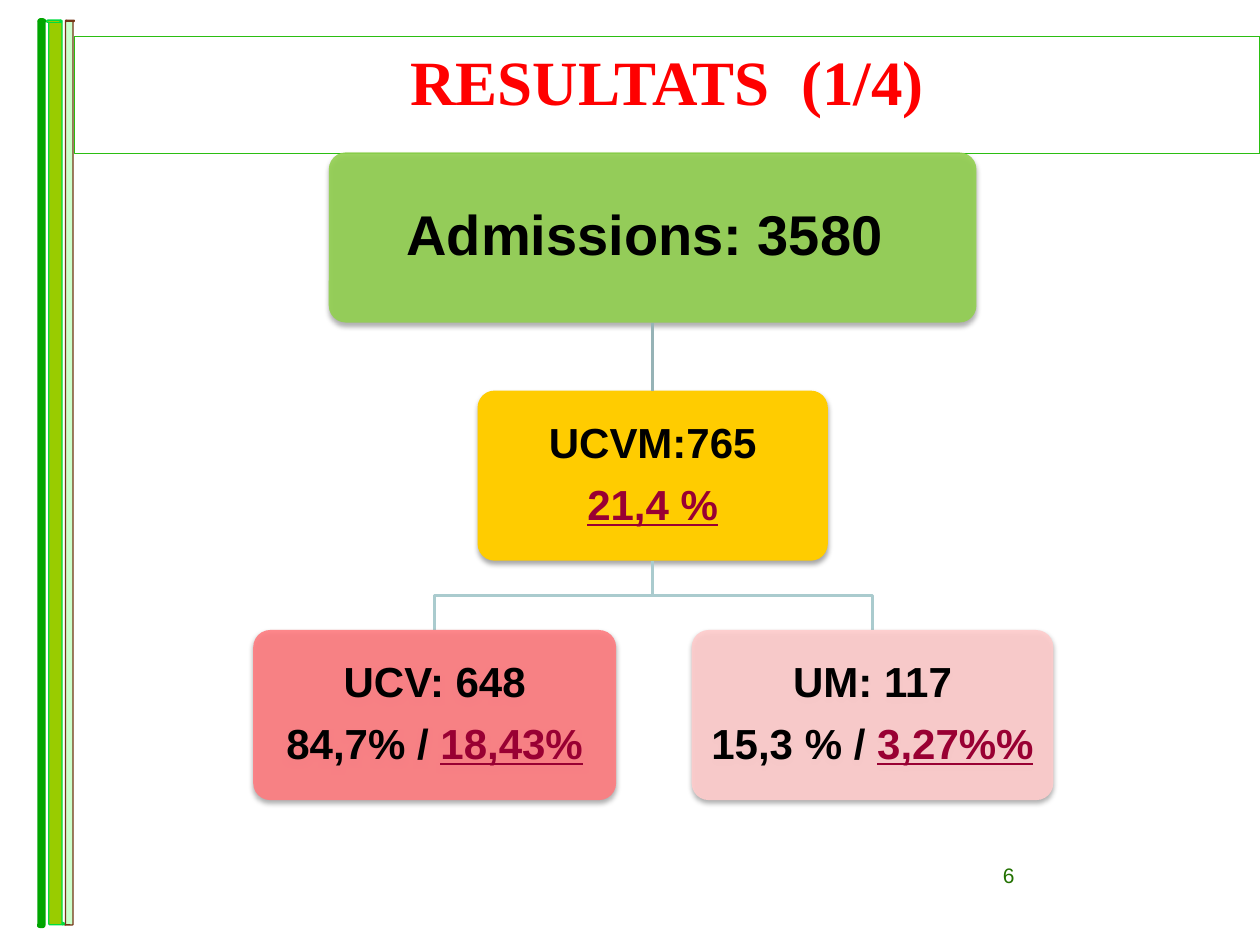
import pptx
import pptx.dml.color
import pptx.enum.dml
import pptx.enum.shapes
import pptx.enum.text
import pptx.oxml
import pptx.oxml.ns
import pptx.util
from dataclasses import dataclass
from typing import Any

Inches = pptx.util.Inches
Pt = pptx.util.Pt
Shape = pptx.enum.shapes.MSO_SHAPE
Anchor = pptx.enum.text.MSO_ANCHOR

HUES = {
    "black": "000000", "wine": "990033", "red": "FF0000", "page": "227100",
    "frame": "2BBE12", "green": "92D050", "gold": "FFCC00", "coral": "FF7C80",
    "pink": "FFCCCC", "stem": "96B3B6", "fork": "AACBCE",
    "mint": "CCFFCC", "brown": "743515", "lime": "99CC00", "neon": "00DD40",
    "brick": "C00000", "leaf": "00A500",
}
NS = 'xmlns:a="http://schemas.openxmlformats.org/drawingml/2006/main"'
HIGH = 1.35


@dataclass
class Band:
    left: float
    top: float
    high: float
    fill: str
    edge: str
    thick: float
    flip: bool


@dataclass
class Node:
    left: float
    top: float
    wide: float
    fill: str
    alpha: int
    size: int
    head: str
    rate: str = ""
    mark: str = ""

    @property
    def mid(self) -> float:
        return self.left + self.wide / 2


def hue(name: str) -> Any:
    return pptx.dml.color.RGBColor.from_string(HUES[name])


def write(para: Any, text: str, *, size: float, color: str = "black",
          font: str = "Arial", bold: bool = True, under: bool = False) -> None:
    run = para.add_run()
    run.text = text
    run.font.size = Pt(size)
    run.font.name = font
    run.font.bold = bold
    run.font.underline = under
    run.font.color.rgb = hue(color)
    para.alignment = pptx.enum.text.PP_ALIGN.CENTER


def stroke(line: Any, color: str, thick: float) -> None:
    line.color.rgb = hue(color)
    line.width = Pt(thick)


def draw_band(slide: Any, band: Band) -> None:
    shape = slide.shapes.add_shape(
        Shape.HORIZONTAL_SCROLL, Inches(band.left), Inches(band.top),
        Inches(7.18), Inches(band.high))
    shape.rotation = 90
    shape.shadow.inherit = False
    shape.fill.solid()
    shape.fill.fore_color.rgb = hue(band.fill)
    stroke(shape.line, band.edge, band.thick)
    if band.flip:
        shape._element.spPr.xfrm.set("flipV", "1")


def draw_title(slide: Any, text: str) -> None:
    box = slide.shapes.add_shape(
        Shape.RECTANGLE, Inches(0.59), Inches(0.29), Inches(9.41), Inches(0.93))
    box.shadow.inherit = False
    box.fill.background()
    stroke(box.line, "frame", 0.75)
    box.text_frame.vertical_anchor = Anchor.TOP
    write(box.text_frame.paragraphs[0], text, size=36, color="red",
          font="Times New Roman")


def draw_page(slide: Any, text: str) -> None:
    box = slide.shapes.add_textbox(
        Inches(7.42), Inches(6.8), Inches(1.17), Inches(0.5))
    box.text_frame.word_wrap = True
    write(box.text_frame.paragraphs[0], text, size=12, color="page", bold=False)


def soften(shape: Any, alpha: int) -> None:
    props = shape._element.spPr
    tint = props.find(".//" + pptx.oxml.ns.qn("a:srgbClr"))
    tint.append(pptx.oxml.parse_xml(f'<a:alpha {NS} val="{alpha * 1000}"/>'))
    shape.shadow.inherit = False
    props.find(pptx.oxml.ns.qn("a:effectLst")).append(pptx.oxml.parse_xml(
        f'<a:outerShdw {NS} blurRad="{Pt(3.1)}" dist="{Pt(1.8)}" dir="5400000" '
        'rotWithShape="0"><a:srgbClr val="000000"><a:alpha val="35000"/>'
        '</a:srgbClr></a:outerShdw>'))


def draw_node(slide: Any, node: Node) -> Any:
    shape = slide.shapes.add_shape(
        Shape.ROUNDED_RECTANGLE, Inches(node.left), Inches(node.top),
        Inches(node.wide), Inches(HIGH))
    shape.adjustments[0] = 0.1
    shape.fill.solid()
    shape.fill.fore_color.rgb = hue(node.fill)
    shape.line.fill.background()
    soften(shape, node.alpha)
    frame = shape.text_frame
    frame.word_wrap = True
    frame.vertical_anchor = Anchor.MIDDLE
    frame.margin_left = frame.margin_right = Inches(0.1)
    write(frame.paragraphs[0], node.head, size=node.size)
    if node.mark:
        para = frame.add_paragraph()
        if node.rate:
            write(para, node.rate, size=node.size)
        write(para, node.mark, size=node.size, color="wine", under=True)
    for para in frame.paragraphs:
        para.line_spacing = 0.9
        para.space_after = Pt(node.size * 0.4)
    return shape


def draw_stem(slide: Any, top: Any, base: Any) -> None:
    stem = slide.shapes.add_connector(
        pptx.enum.shapes.MSO_CONNECTOR.STRAIGHT, 0, 0, 0, 0)
    stem.begin_connect(top, 2)
    stem.end_connect(base, 0)
    stroke(stem.line, "stem", 2)
    stem._element.spPr.append(pptx.oxml.parse_xml(f"<a:effectLst {NS}/>"))


def draw_fork(slide: Any, top: Node, base: Node) -> None:
    start = top.top + HIGH
    bend = (start + base.top) / 2
    pen = slide.shapes.build_freeform(
        Inches(top.mid), Inches(start), scale=1.0)
    pen.add_line_segments(
        [(Inches(x), Inches(y)) for x, y in
         ((top.mid, bend), (base.mid, bend), (base.mid, base.top))], close=False)
    fork = pen.convert_to_shape()
    fork.shadow.inherit = False
    fork.fill.background()
    stroke(fork.line, "fork", 2)


BANDS = [
    Band(-3.04, 3.71, 0.08, "mint", "brown", 0.75, True),
    Band(-3.15, 3.68, 0.14, "lime", "neon", 0.75, False),
    Band(-3.26, 3.74, 0.03, "brick", "leaf", 3, True),
]
ROOT = Node(2.61, 1.21, 5.14, "green", 90, 32, "Admissions: 3580 ")
UNIT = Node(3.79, 3.1, 2.78, "gold", 100, 24, "UCVM:765", mark="21,4 %")
LEAVES = [
    Node(2.01, 5, 2.88, "coral", 90, 24, "UCV: 648", "84,7% / ", "18,43%"),
    Node(5.49, 5, 2.87, "pink", 90, 24, "UM: 117", "15,3 % / ", "3,27%%"),
]


def main() -> None:
    deck = pptx.Presentation()
    deck.slide_width, deck.slide_height = Inches(10), Inches(7.5)
    slide = deck.slides.add_slide(deck.slide_layouts[6])
    for band in BANDS:
        draw_band(slide, band)
    draw_page(slide, "6")
    draw_title(slide, "RESULTATS  (1/4)")
    root = draw_node(slide, ROOT)
    unit = draw_node(slide, UNIT)
    draw_stem(slide, root, unit)
    for leaf in LEAVES:
        draw_fork(slide, UNIT, leaf)
        draw_node(slide, leaf)
    deck.save("out.pptx")


if __name__ == "__main__":
    main()
